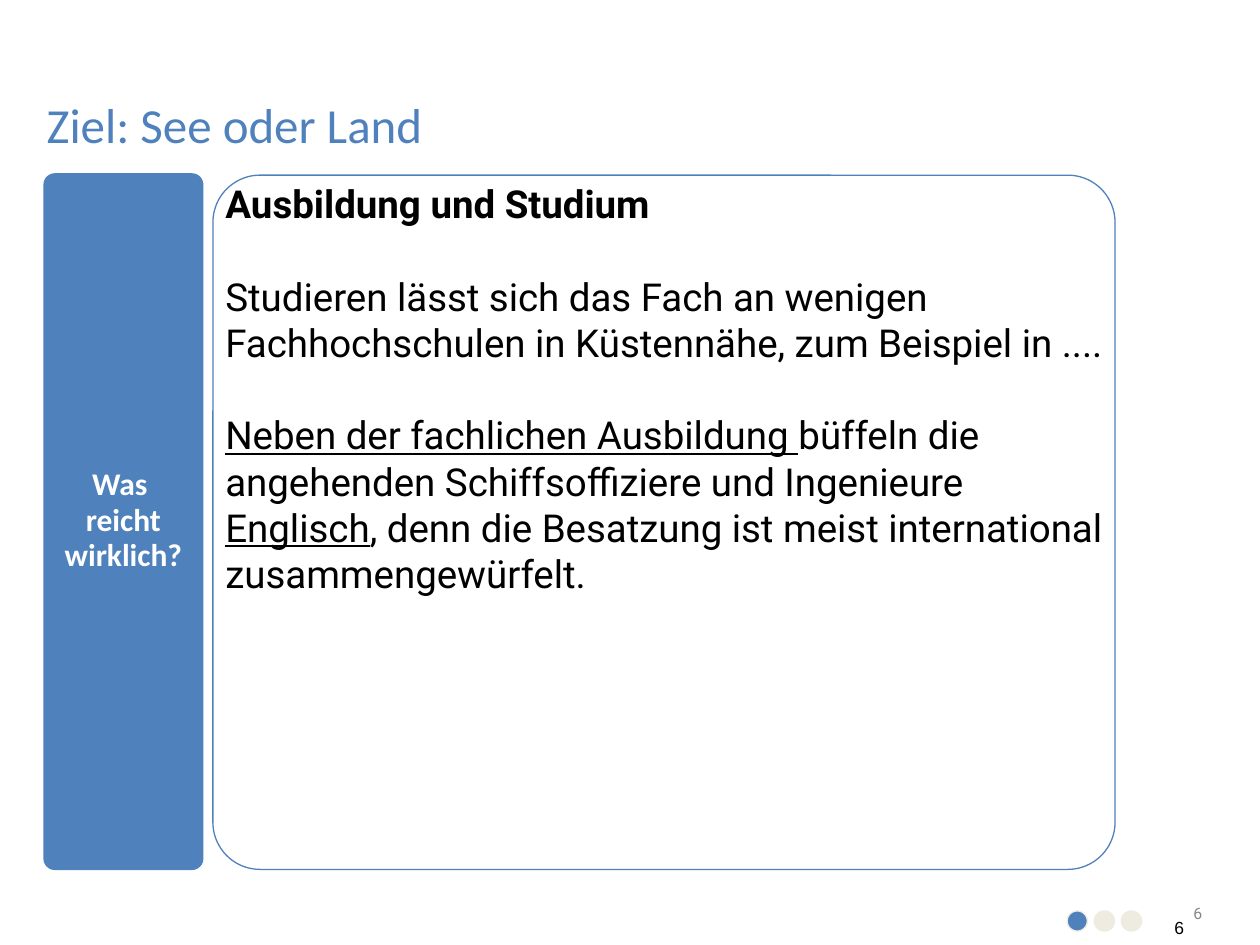
from pptx import Presentation
from pptx.dml.color import RGBColor
from pptx.enum.shapes import MSO_SHAPE
from pptx.enum.text import MSO_ANCHOR, MSO_AUTO_SIZE, PP_ALIGN
from pptx.util import Inches, Pt

OVAL, ROUNDED = MSO_SHAPE.OVAL, MSO_SHAPE.ROUNDED_RECTANGLE
LEFT, CENTER, RIGHT = PP_ALIGN.LEFT, PP_ALIGN.CENTER, PP_ALIGN.RIGHT
BOTTOM, MIDDLE = MSO_ANCHOR.BOTTOM, MSO_ANCHOR.MIDDLE
NO_FIT = MSO_AUTO_SIZE.NONE

COLORS = {"blue": "4F81BD", "sand": "EEECE1", "gray": "878787",
          "white": "FFFFFF", "black": "000000"}
CORNER = 0.068
DOT, DOT_STEP = 0.16, 0.215
TITLE_ONLY = 5

BODY = [
    [("Ausbildung und Studium", "b")],
    [("Studieren lässt sich das Fach an wenigen Fachhochschulen in "
      "Küstennähe, zum Beispiel in ....", "")],
    [("Neben der fachlichen Ausbildung ", "u"),
     ("büffeln die angehenden Schiffsoffiziere und Ingenieure ", ""),
     ("Englisch", "u"),
     (", denn die Besatzung ist meist international zusammengewürfelt.", "")],
]


def rgb(name):
    return RGBColor.from_string(COLORS[name])


def box(*lengths):
    return [Inches(v) for v in lengths]


def add_run(p, text, font, size, color, style=""):
    r = p.add_run()
    r.text = text
    r.font.name = font
    r.font.size = Pt(size)
    r.font.bold = "b" in style
    r.font.underline = "u" in style
    r.font.color.rgb = rgb(color)


def fill_text(tf, paragraphs, font, size, color, align=LEFT,
              spacing=None, before=0, after=0):
    for i, runs in enumerate(paragraphs):
        p = tf.add_paragraph() if i else tf.paragraphs[0]
        p.alignment = align
        p.line_spacing = spacing
        p.space_before = Pt(before if i else 0)
        p.space_after = Pt(after)
        for text, style in runs:
            add_run(p, text, font, size, color, style)


def set_margins(tf, inches):
    tf.margin_left = tf.margin_right = Inches(inches)
    tf.margin_top = tf.margin_bottom = Inches(inches)


def add_title(s, text):
    sp = s.shapes.title
    sp.left, sp.top, sp.width, sp.height = box(0.37, 0.55, 8.7, 0.67)
    tf = sp.text_frame
    tf.auto_size = NO_FIT
    tf.vertical_anchor = BOTTOM
    set_margins(tf, 0)
    fill_text(tf, [[(text, "")]], "Calibri", 28, "blue", spacing=0.85)


def add_shape(shapes, kind, place, fill, line):
    sp = shapes.add_shape(kind, *box(*place))
    sp.shadow.inherit = False
    if fill:
        sp.fill.solid()
        sp.fill.fore_color.rgb = rgb(fill)
    else:
        sp.fill.background()
    sp.line.color.rgb = rgb(line)
    sp.line.width = Pt(0.75)
    if kind == ROUNDED:
        sp.adjustments[0] = CORNER
    return sp


def add_text(s, place, paragraphs, font, size, color, wrap=True, **layout):
    tf = s.shapes.add_textbox(*box(*place)).text_frame
    tf.word_wrap = wrap
    fill_text(tf, paragraphs, font, size, color, **layout)


def add_progress_dots(s, left, top, fills):
    group = s.shapes.add_group_shape()
    for i, fill in enumerate(fills):
        add_shape(group.shapes, OVAL, (left + i * DOT_STEP, top, DOT, DOT),
                  fill, "sand")


def add_side_label(s, lines):
    sp = add_shape(s.shapes, ROUNDED, (0.35, 1.38, 1.26, 5.52), "blue", "blue")
    tf = sp.text_frame
    tf.word_wrap = True
    tf.vertical_anchor = MIDDLE
    set_margins(tf, 0.04)
    fill_text(tf, [[(line, "b")] for line in lines], "Calibri", 18, "white",
              align=CENTER, spacing=0.85, after=1.8)


def main():
    prs = Presentation()
    prs.slide_width, prs.slide_height = box(10, 7.5)
    s = prs.slides.add_slide(prs.slide_layouts[TITLE_ONLY])
    number = [[("6", "")]]
    add_text(s, (9.19, 7.12, 0.45, 0.25), number, "Roboto", 9, "gray",
             wrap=False, align=RIGHT)
    add_text(s, (9.25, 7.23, 0.17, 0.16), number, "Arial", 10, "black")
    add_title(s, "Ziel: See oder Land")
    add_progress_dots(s, 8.47, 7.23, ["blue", "sand", "sand"])
    add_side_label(s, ["Was ", "reicht", "wirklich?"])
    add_shape(s.shapes, ROUNDED, (1.69, 1.39, 7.16, 5.51), None, "blue")
    add_text(s, (1.69, 1.38, 7.19, 3.43), BODY, "Roboto", 22, "black",
             before=26.5)
    prs.save("out.pptx")


if __name__ == "__main__":
    main()
